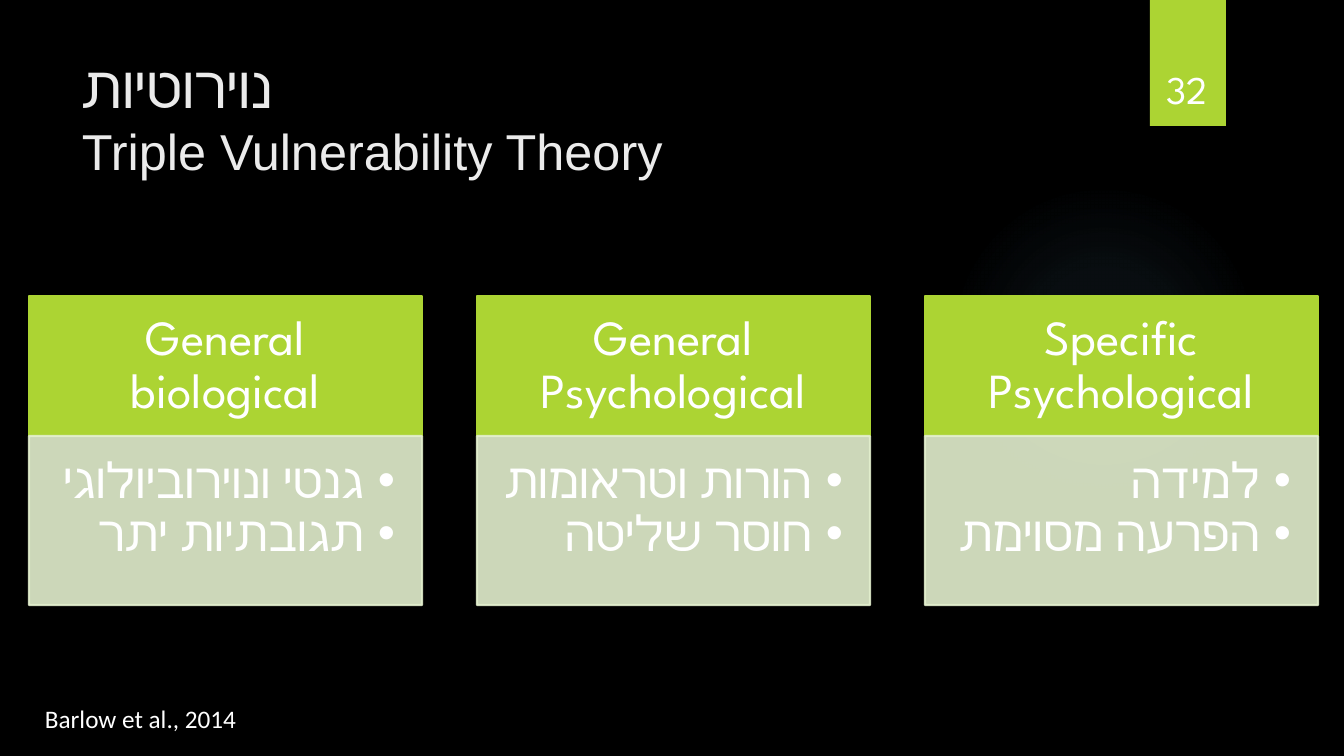
from dataclasses import dataclass

from lxml.etree import SubElement
from pptx import Presentation
from pptx.dml.color import RGBColor
from pptx.enum.shapes import MSO_SHAPE as Preset
from pptx.enum.text import MSO_ANCHOR as Anchor, PP_ALIGN as Align
from pptx.oxml import parse_xml
from pptx.oxml.ns import nsdecls, qn
from pptx.shapes.autoshape import Shape
from pptx.slide import Slide
from pptx.util import Emu, Pt

SLIDE_WIDTH, SLIDE_HEIGHT = 1344, 756
EMU_PER_PX = 12192000 / SLIDE_WIDTH


@dataclass(frozen=True)
class Theme:
    background: str = "000000"
    accent: str = "ACD433"
    panel: str = "E3EFCE"
    glow: str = "7AC4F0"
    title_color: str = "EBEBEB"
    text_color: str = "FFFFFF"
    display_font: str = "League Spartan"
    title_font: str = "Arial"
    source_font: str = "Calibri"
    title_size: int = 42
    subtitle_size: int = 36
    card_size: int = 35
    number_size: int = 28
    source_size: int = 18
    panel_opacity: int = 90


@dataclass(frozen=True)
class Box:
    left: int
    top: int
    width: int
    height: int


@dataclass(frozen=True)
class Style:
    font: str
    size: int
    color: str


@dataclass(frozen=True)
class Card:
    heading: str
    points: tuple[str, ...]


THEME = Theme()
CARD_STYLE = Style(THEME.display_font, THEME.card_size, THEME.text_color)
CARDS = (
    Card("General biological", ("גנטי ונוירוביולוגי", "תגובתיות יתר")),
    Card("General Psychological", ("הורות וטראומות", "חוסר שליטה")),
    Card("Specific Psychological", ("למידה", "הפרעה מסוימת")),
)
CARD_LEFT, CARD_TOP, CARD_PITCH, CARD_WIDTH = 29, 296, 448, 393
HEADING_HEIGHT, PANEL_HEIGHT = 140, 169
BULLET_INDENT = 31


def px(length: int) -> Emu:
    return Emu(round(length * EMU_PER_PX))


def apply(target: object, values: dict[str, object]) -> None:
    for name, value in values.items():
        setattr(target, name, value)


def place(box: Box) -> tuple[Emu, Emu, Emu, Emu]:
    return px(box.left), px(box.top), px(box.width), px(box.height)


def add_block(slide: Slide, preset: Preset, box: Box, color: str,
              outlined: bool = False, opacity: int = 100) -> Shape:
    shape = slide.shapes.add_shape(preset, *place(box))
    shape.shadow.inherit = False
    shape.fill.solid()
    shape.fill.fore_color.rgb = RGBColor.from_string(color)
    if outlined:
        shape.line.color.rgb = RGBColor.from_string(color)
        shape.line.width = Pt(1.5)
    else:
        shape.line.fill.background()
    if opacity < 100:
        for element in list(shape._element.spPr.iter(qn("a:srgbClr"))):
            SubElement(element, qn("a:alpha"), val=str(opacity * 1000))
    return shape


def set_frame(shape: Shape, insets: tuple[int, int, int, int],
              anchor: Anchor = Anchor.TOP, wrap: bool = True) -> None:
    sides = ("margin_left", "margin_top", "margin_right", "margin_bottom")
    margins = {side: px(inset) for side, inset in zip(sides, insets)}
    apply(shape.text_frame, {"word_wrap": wrap, "vertical_anchor": anchor, **margins})


def format_paragraph(paragraph, align: Align, spacing: float = 1.0,
                     rtl: bool = True, bullet: bool = False) -> None:
    properties = paragraph._p.get_or_add_pPr()
    if rtl:
        properties.set("rtl", "1")
    if bullet:
        indent = px(BULLET_INDENT)
        properties.set("marL", str(indent))
        properties.set("indent", str(-indent))
        SubElement(properties, qn("a:buFont"), typeface="Arial")
        SubElement(properties, qn("a:buChar"), char="•")
    apply(paragraph, {"alignment": align, "line_spacing": spacing})


def add_text(paragraph, text: str, style: Style) -> None:
    run = paragraph.add_run()
    run.text = text
    apply(run.font, {"name": style.font, "size": Pt(style.size)})
    run.font.color.rgb = RGBColor.from_string(style.color)
    SubElement(run._r.get_or_add_rPr(), qn("a:cs"), typeface=THEME.display_font)


def add_glow(slide: Slide, box: Box) -> None:
    shape = add_block(slide, Preset.OVAL, box, THEME.glow)
    stops = "".join(
        f'<a:gs pos="{position * 1000}"><a:srgbClr val="{THEME.glow}">'
        f'<a:alpha val="{opacity * 1000}"/></a:srgbClr></a:gs>'
        for position, opacity in ((0, 7), (36, 6), (69, 0), (100, 0)))
    gradient = parse_xml(
        f'<a:gradFill {nsdecls("a")} rotWithShape="1"><a:gsLst>{stops}</a:gsLst>'
        '<a:path path="circle"><a:fillToRect l="50000" t="50000" r="50000" b="50000"/>'
        '</a:path></a:gradFill>')
    properties = shape._element.spPr
    properties.replace(properties.find(qn("a:solidFill")), gradient)


def add_title(slide: Slide) -> None:
    shape = slide.shapes.add_textbox(*place(Box(72, 50, 1037, 154)))
    set_frame(shape, (10, 0, 10, 5))
    paragraph = shape.text_frame.paragraphs[0]
    format_paragraph(paragraph, Align.LEFT)
    add_text(paragraph, "נוירוטיות",
             Style(THEME.title_font, THEME.title_size, THEME.title_color))
    paragraph.add_line_break()
    add_text(paragraph, "Triple Vulnerability Theory",
             Style(THEME.title_font, THEME.subtitle_size, THEME.title_color))


def add_number(slide: Slide) -> None:
    shape = slide.shapes.add_textbox(*place(Box(1141, 32, 93, 85)))
    set_frame(shape, (10, 5, 10, 5), Anchor.BOTTOM)
    paragraph = shape.text_frame.paragraphs[0]
    format_paragraph(paragraph, Align.CENTER)
    add_text(paragraph, "32", Style(THEME.display_font, THEME.number_size, THEME.text_color))


def add_source(slide: Slide) -> None:
    shape = slide.shapes.add_textbox(*place(Box(35, 696, 214, 41)))
    set_frame(shape, (10, 5, 10, 5), wrap=False)
    paragraph = shape.text_frame.paragraphs[0]
    format_paragraph(paragraph, Align.LEFT, 1.07, rtl=False)
    add_text(paragraph, "Barlow et al., 2014",
             Style(THEME.source_font, THEME.source_size, THEME.text_color))


def add_card(slide: Slide, card: Card, left: int) -> None:
    heading = add_block(slide, Preset.RECTANGLE,
                        Box(left, CARD_TOP, CARD_WIDTH, HEADING_HEIGHT),
                        THEME.accent, outlined=True)
    set_frame(heading, (27, 16, 27, 16), Anchor.MIDDLE)
    paragraph = heading.text_frame.paragraphs[0]
    format_paragraph(paragraph, Align.CENTER, 0.9)
    add_text(paragraph, card.heading, CARD_STYLE)

    panel = add_block(slide, Preset.RECTANGLE,
                      Box(left, CARD_TOP + HEADING_HEIGHT, CARD_WIDTH, PANEL_HEIGHT),
                      THEME.panel, outlined=True, opacity=THEME.panel_opacity)
    set_frame(panel, (20, 20, 27, 31))
    frame = panel.text_frame
    for index, point in enumerate(card.points):
        paragraph = frame.add_paragraph() if index else frame.paragraphs[0]
        format_paragraph(paragraph, Align.RIGHT, 0.9, bullet=True)
        add_text(paragraph, point, CARD_STYLE)


def main() -> None:
    presentation = Presentation()
    apply(presentation, {"slide_width": px(SLIDE_WIDTH), "slide_height": px(SLIDE_HEIGHT)})
    slide = presentation.slides.add_slide(presentation.slide_layouts[6])

    # Backdrop and number tag
    slide.background.fill.solid()
    slide.background.fill.fore_color.rgb = RGBColor.from_string(THEME.background)
    add_glow(slide, Box(949, 184, 310, 310))
    add_block(slide, Preset.RECTANGLE, Box(1150, 0, 76, 126), THEME.accent)

    # Title, number and source
    add_title(slide)
    add_number(slide)
    add_source(slide)

    # Vulnerability cards
    for index, card in enumerate(CARDS):
        add_card(slide, card, CARD_LEFT + index * CARD_PITCH)

    presentation.save("out.pptx")


if __name__ == "__main__":
    main()
